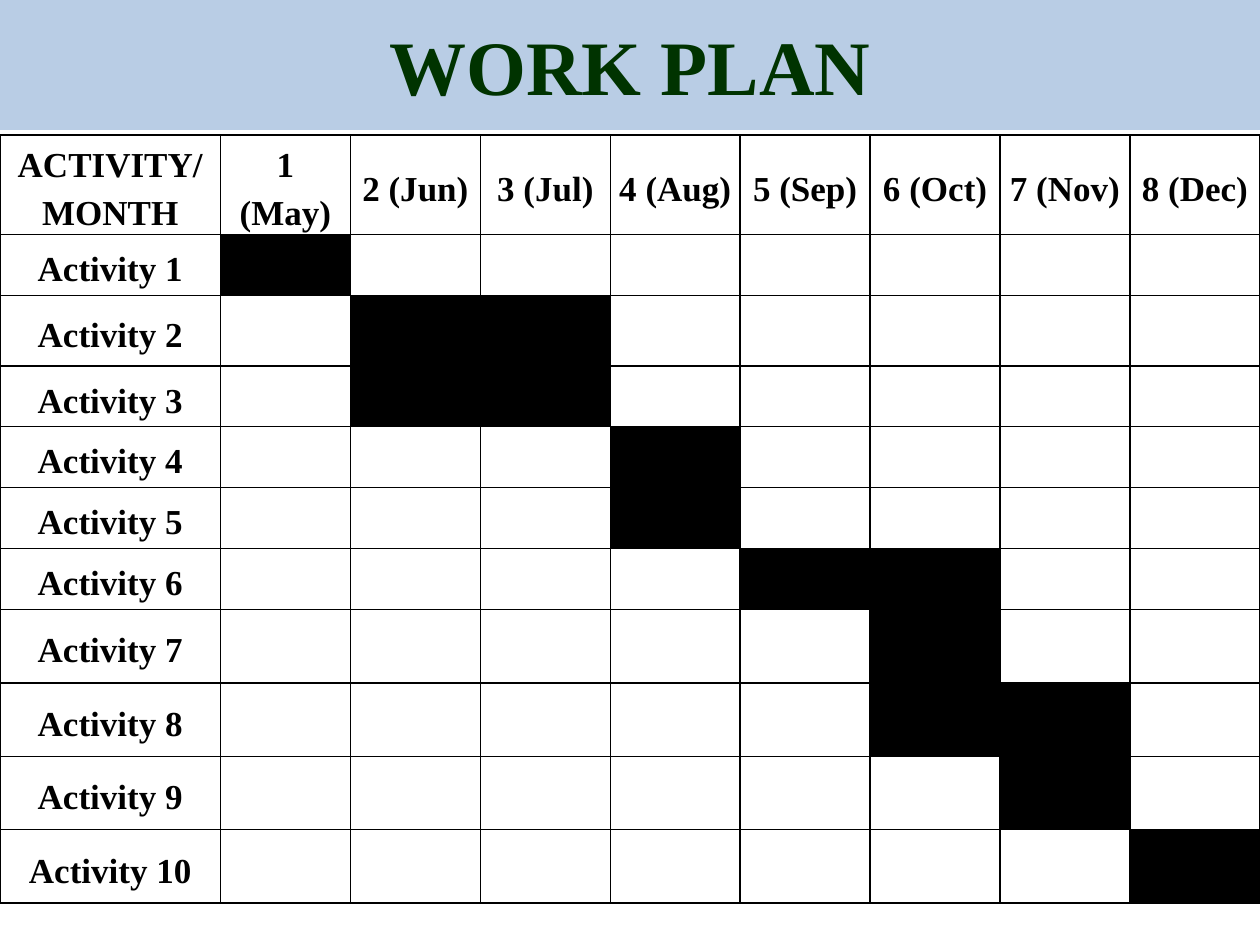
from lxml.etree import SubElement
from pptx import Presentation
from pptx.dml.color import RGBColor
from pptx.enum.text import MSO_ANCHOR, PP_ALIGN
from pptx.oxml.ns import qn
from pptx.util import Pt

COLORS = {"band": "B9CDE5", "title": "003300", "ink": "000000", "paper": "FFFFFF"}
FONT = "Times New Roman"
TITLE = "WORK PLAN"
HEADERS = ["ACTIVITY/MONTH", "1 (May)", "2 (Jun)", "3 (Jul)", "4 (Aug)",
           "5 (Sep)", "6 (Oct)", "7 (Nov)", "8 (Dec)"]
ACTIVITIES = [
    ("Activity 1", [1], 34.8),
    ("Activity 2", [2, 3], 40.3),
    ("Activity 3", [2, 3], 34.8),
    ("Activity 4", [4], 34.8),
    ("Activity 5", [4], 34.8),
    ("Activity 6", [5, 6], 34.8),
    ("Activity 7", [6], 42),
    ("Activity 8", [6, 7], 42),
    ("Activity 9", [7], 42),
    ("Activity 10", [8], 42),
]
WIDTH, HEIGHT = 720, 540
BAND_HEIGHT, TABLE_TOP = 74.2, 77.1
HEADER_HEIGHT, LABEL_WIDTH = 56.9, 126


def color(name):
    return RGBColor.from_string(COLORS[name])


def format_text(frame, size, ink):
    para = frame.paragraphs[0]
    para.alignment = PP_ALIGN.CENTER
    for span in para.runs:
        span.font.name = FONT
        span.font.size = Pt(size)
        span.font.bold = True
        span.font.color.rgb = color(ink)
    return para


def format_cell(cell, filled):
    properties = cell._tc.get_or_add_tcPr()
    for side in ("a:lnL", "a:lnR", "a:lnT", "a:lnB"):
        line = SubElement(properties, qn(side), w=str(Pt(1)))
        solid = SubElement(line, qn("a:solidFill"))
        SubElement(solid, qn("a:srgbClr"), val=COLORS["ink"])
    cell.fill.solid()
    cell.fill.fore_color.rgb = color("ink" if filled else "paper")
    cell.vertical_anchor = MSO_ANCHOR.MIDDLE
    cell.margin_left = cell.margin_right = Pt(3.6)
    cell.margin_top = cell.margin_bottom = Pt(0)


def write_cell(cell, text):
    cell.text_frame.text = text
    para = format_text(cell.text_frame, 20, "ink")
    para.line_spacing = 1.25
    para.space_before = para.space_after = Pt(6)


def add_title(page):
    title = page.shapes.title
    title.left, title.top = Pt(0), Pt(0)
    title.width, title.height = Pt(WIDTH), Pt(BAND_HEIGHT)
    title.fill.solid()
    title.fill.fore_color.rgb = color("band")
    title.text_frame.text = TITLE
    title.text_frame.vertical_anchor = MSO_ANCHOR.MIDDLE
    format_text(title.text_frame, 44, "title")


def add_plan(page):
    heights = [HEADER_HEIGHT] + [height for _, _, height in ACTIVITIES]
    month_width = (WIDTH - LABEL_WIDTH) / (len(HEADERS) - 1)
    plan = page.shapes.add_table(len(heights), len(HEADERS), Pt(0), Pt(TABLE_TOP),
                                 Pt(WIDTH), Pt(sum(heights))).table
    plan.horz_banding = False
    for index, column in enumerate(plan.columns):
        column.width = Pt(month_width if index else LABEL_WIDTH)
    for row, height in zip(plan.rows, heights):
        row.height = Pt(height)
    for index, header in enumerate(HEADERS):
        format_cell(plan.cell(0, index), False)
        write_cell(plan.cell(0, index), header)
    for row, (name, months, _) in enumerate(ACTIVITIES, 1):
        for month in range(len(HEADERS)):
            format_cell(plan.cell(row, month), month in months)
        write_cell(plan.cell(row, 0), name)


def main():
    deck = Presentation()
    deck.slide_width, deck.slide_height = Pt(WIDTH), Pt(HEIGHT)
    page = deck.slides.add_slide(deck.slide_layouts[5])
    add_title(page)
    add_plan(page)
    deck.save("out.pptx")


if __name__ == "__main__":
    main()
